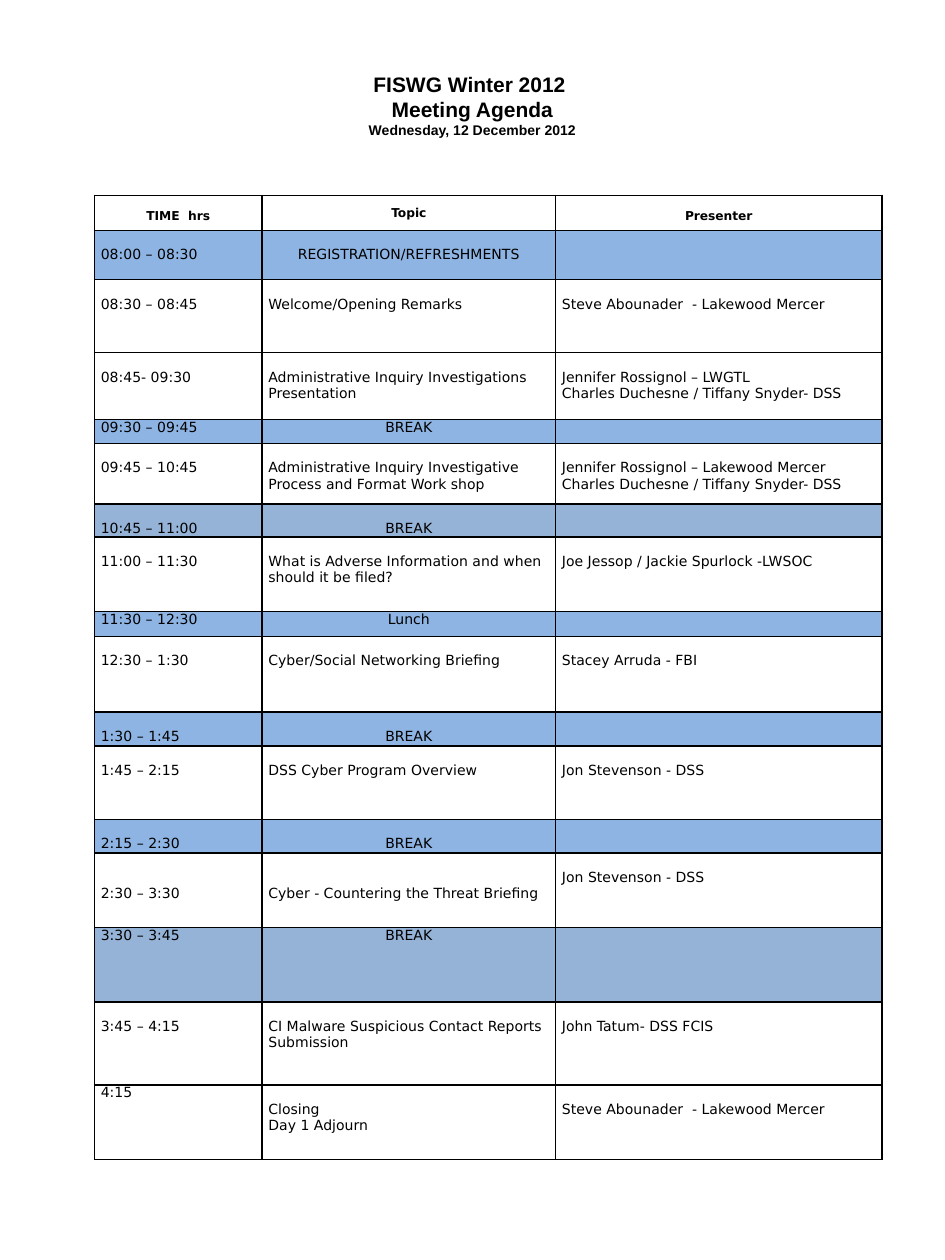
import pptx
import pptx.dml.color
import pptx.enum.text
import pptx.oxml.ns
import pptx.util
from lxml import etree

Inches = pptx.util.Inches
Pt = pptx.util.Pt
RGBColor = pptx.dml.color.RGBColor
PP_ALIGN = pptx.enum.text.PP_ALIGN
MSO_ANCHOR = pptx.enum.text.MSO_ANCHOR
qn = pptx.oxml.ns.qn

BLACK = RGBColor(0x00, 0x00, 0x00)
BLUE = RGBColor(0x8E, 0xB4, 0xE3)
GREY_BLUE = RGBColor(0x95, 0xB3, 0xD7)

TITLE_FORMAT = {"name": "Arial", "size": Pt(12), "bold": True}
DATE_FORMAT = {"name": "Arial", "size": Pt(8), "bold": True}
HEADER_FORMAT = {"name": "DejaVu Sans", "size": Pt(7), "bold": True}
BODY_FORMAT = {"name": "DejaVu Sans", "size": Pt(8), "bold": False}

HEADER_LINE = 0.11
BODY_LINE = 0.13
COLUMN_WIDTHS = (1.33, 2.33, 2.59)
HEADER_HEIGHT = 0.28
HEADINGS = ("TIME  hrs", "Topic", "Presenter")

# Row height, band colour, lines left free above each text, time, topic, presenter
SESSIONS = [
    (0.39, BLUE, (1, 1, 0), "08:00 – 08:30", "REGISTRATION/REFRESHMENTS", ""),
    (0.58, None, (1, 1, 1), "08:30 – 08:45", "Welcome/Opening Remarks",
     "Steve Abounader  - Lakewood Mercer"),
    (0.53, None, (1, 1, 1), "08:45- 09:30",
     "Administrative Inquiry Investigations\nPresentation",
     "Jennifer Rossignol – LWGTL\nCharles Duchesne / Tiffany Snyder- DSS"),
    (0.19, BLUE, (0, 0, 0), "09:30 – 09:45", "BREAK", ""),
    (0.48, None, (1, 1, 1), "09:45 – 10:45",
     "Administrative Inquiry Investigative Process and Format Work shop",
     "Jennifer Rossignol – Lakewood Mercer\nCharles Duchesne / Tiffany Snyder- DSS"),
    (0.26, GREY_BLUE, (1, 1, 0), "10:45 – 11:00", "BREAK", ""),
    (0.59, None, (1, 1, 1), "11:00 – 11:30",
     "What is Adverse Information and when should it be filed?",
     "Joe Jessop / Jackie Spurlock -LWSOC"),
    (0.2, BLUE, (0, 0, 0), "11:30 – 12:30", "Lunch", ""),
    (0.6, None, (1, 1, 1), "12:30 – 1:30", "Cyber/Social Networking Briefing",
     "Stacey Arruda - FBI"),
    (0.27, BLUE, (1, 1, 0), "1:30 – 1:45", "BREAK", ""),
    (0.58, None, (1, 1, 1), "1:45 – 2:15", "DSS Cyber Program Overview",
     "Jon Stevenson - DSS"),
    (0.27, BLUE, (1, 1, 0), "2:15 – 2:30", "BREAK", ""),
    (0.59, None, (2, 2, 1), "2:30 – 3:30", "Cyber - Countering the Threat Briefing",
     "Jon Stevenson - DSS"),
    (0.59, GREY_BLUE, (0, 0, 0), "3:30 – 3:45", "BREAK", ""),
    (0.66, None, (1, 1, 1), "3:45 – 4:15",
     "CI Malware Suspicious Contact Reports Submission", "John Tatum- DSS FCIS"),
    (0.59, None, (0, 1, 1), "4:15", "Closing\nDay 1 Adjourn",
     "Steve Abounader  - Lakewood Mercer"),
]


def set_attributes(target, values):
    for name, value in values.items():
        setattr(target, name, value)


def format_paragraph(paragraph, font_format, alignment):
    paragraph.alignment = alignment
    for run in paragraph.runs:
        set_attributes(run.font, font_format)
        run.font.color.rgb = BLACK
    if not paragraph.runs:
        # An empty cell keeps the text size, so that low rows stay low
        size = str(int(font_format["size"].pt * 100))
        etree.SubElement(paragraph._p, qn("a:endParaRPr"), sz=size)


def add_borders(cell):
    properties = cell._tc.get_or_add_tcPr()
    for position, side in enumerate(("lnL", "lnR", "lnT", "lnB")):
        line = etree.Element(qn(f"a:{side}"), w=str(Pt(1)))
        fill = etree.SubElement(line, qn("a:solidFill"))
        etree.SubElement(fill, qn("a:srgbClr"), val=str(BLACK))
        properties.insert(position, line)


def fill_cell(cell, text, font_format, alignment, top, band=None):
    set_attributes(cell, {
        "margin_left": Inches(0.05), "margin_right": Inches(0.05),
        "margin_top": Inches(top), "margin_bottom": 0,
        "vertical_anchor": MSO_ANCHOR.TOP,
    })
    if band is None:
        cell.fill.background()
    else:
        cell.fill.solid()
        cell.fill.fore_color.rgb = band
    add_borders(cell)
    cell.text_frame.text = text
    for paragraph in cell.text_frame.paragraphs:
        format_paragraph(paragraph, font_format, alignment)


def add_heading(slide):
    heading = slide.shapes.add_textbox(0, Inches(0.51), Inches(7.5), Inches(0.94))
    frame = heading.text_frame
    set_attributes(frame, {
        "word_wrap": True, "vertical_anchor": MSO_ANCHOR.MIDDLE,
        "margin_top": Inches(0.05), "margin_bottom": Inches(0.34),
    })
    frame.text = "FISWG Winter 2012 \nMeeting Agenda\nWednesday, 12 December 2012"
    formats = (TITLE_FORMAT, TITLE_FORMAT, DATE_FORMAT)
    for paragraph, font_format in zip(frame.paragraphs, formats):
        format_paragraph(paragraph, font_format, PP_ALIGN.CENTER)


def add_agenda(slide):
    heights = [HEADER_HEIGHT] + [session[0] for session in SESSIONS]
    agenda = slide.shapes.add_table(
        len(heights), len(COLUMN_WIDTHS), Inches(0.75), Inches(1.55),
        Inches(sum(COLUMN_WIDTHS)), Inches(sum(heights))).table
    set_attributes(agenda, {"first_row": False, "horz_banding": False})
    for column, width in zip(agenda.columns, COLUMN_WIDTHS):
        column.width = Inches(width)
    for row, height in zip(agenda.rows, heights):
        row.height = Inches(height)

    # Column headings
    for column, text in enumerate(HEADINGS):
        top = 0 if text == "Topic" else HEADER_LINE
        fill_cell(agenda.cell(0, column), text, HEADER_FORMAT, PP_ALIGN.CENTER, top)
    agenda.cell(0, HEADINGS.index("Topic")).vertical_anchor = MSO_ANCHOR.MIDDLE

    # Sessions, with the topic centred in the coloured rows
    for row, (_, band, free_lines, *texts) in enumerate(SESSIONS, start=1):
        for column, (text, lines) in enumerate(zip(texts, free_lines)):
            centred = band is not None and column == 1
            alignment = PP_ALIGN.CENTER if centred else PP_ALIGN.LEFT
            fill_cell(agenda.cell(row, column), text, BODY_FORMAT, alignment,
                      lines * BODY_LINE, band)


def main():
    presentation = pptx.Presentation()
    set_attributes(presentation,
                   {"slide_width": Inches(7.5), "slide_height": Inches(10)})
    slide = presentation.slides.add_slide(presentation.slide_layouts[6])
    add_heading(slide)
    add_agenda(slide)
    presentation.save("out.pptx")


if __name__ == "__main__":
    main()
